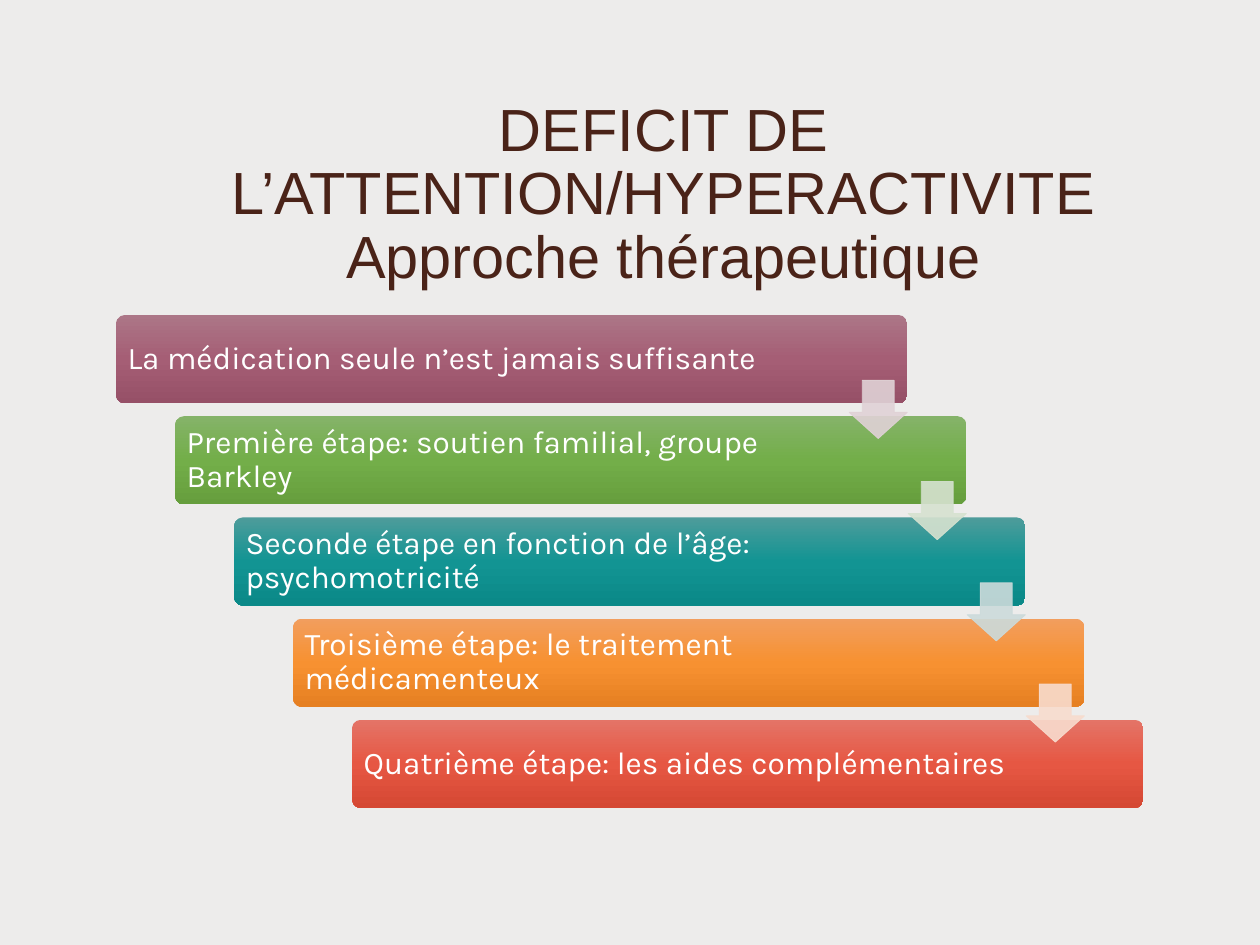
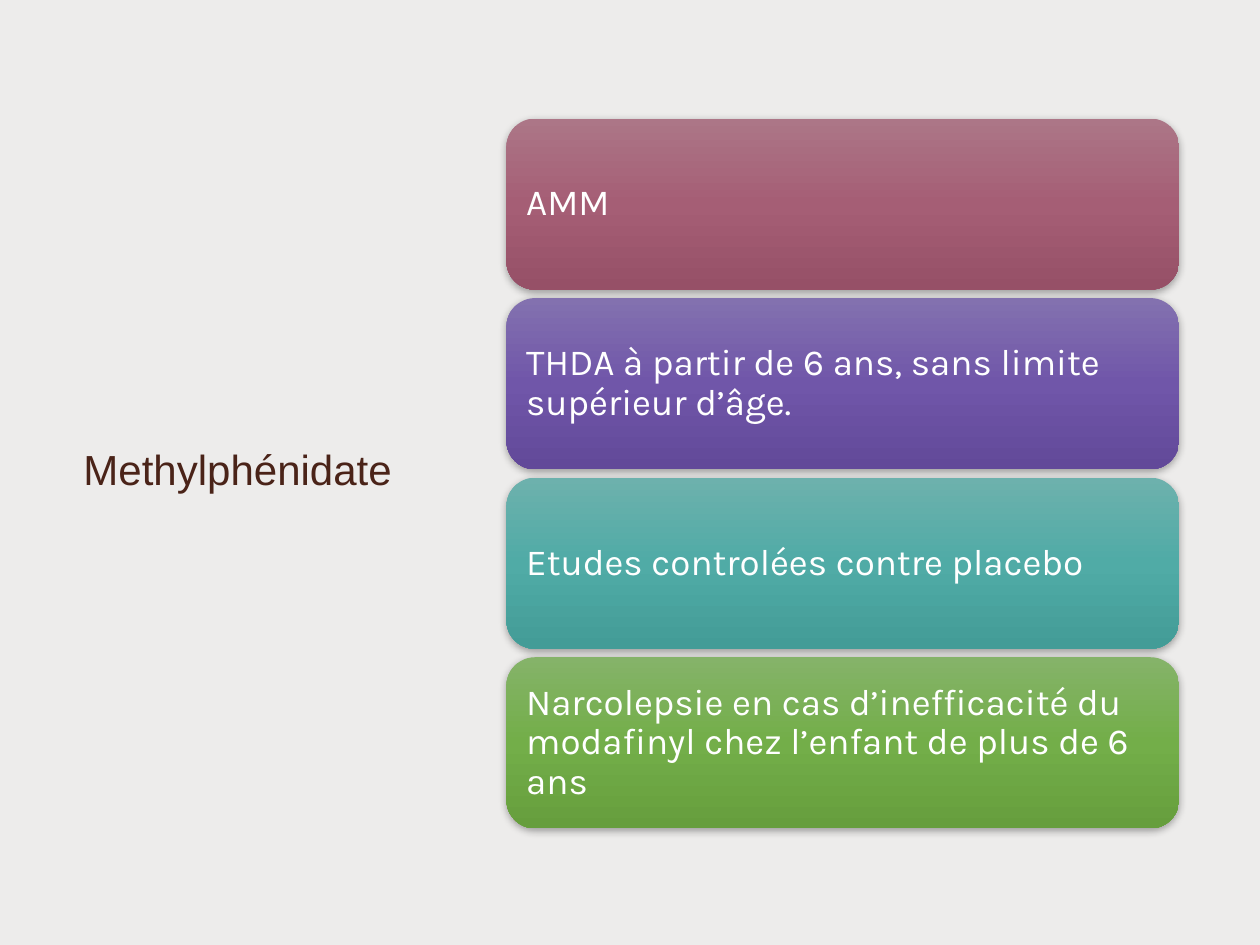
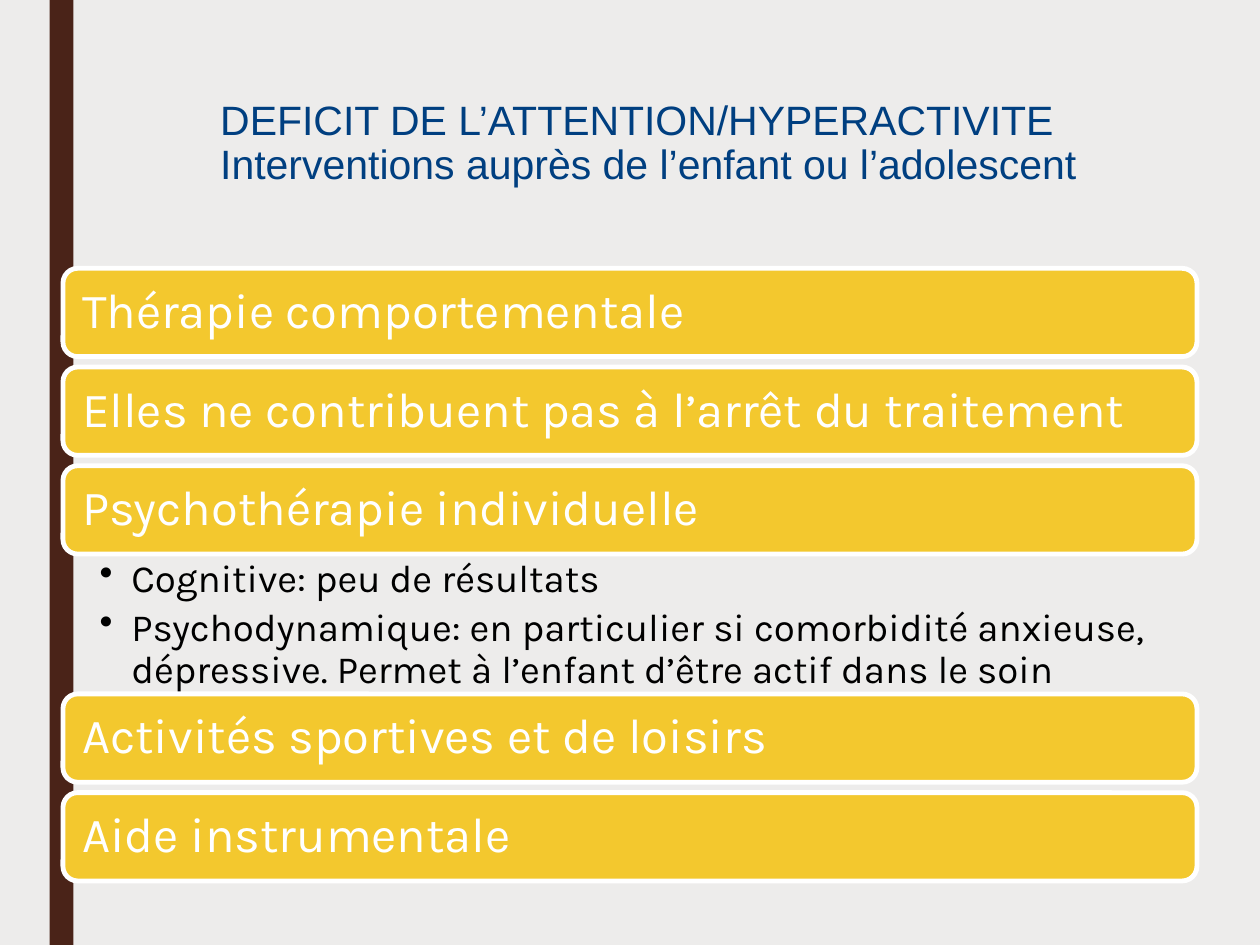
"""Build three slides on the treatment of attention deficit."""
from copy import deepcopy
from dataclasses import dataclass

from lxml.etree import SubElement
from pptx import Presentation
from pptx.dml.color import RGBColor as Rgb
from pptx.enum.shapes import MSO_SHAPE as Form
from pptx.enum.text import MSO_ANCHOR as Anchor, PP_ALIGN as Align
from pptx.oxml.ns import qn
from pptx.shapes.autoshape import Shape
from pptx.slide import Slide
from pptx.text.text import TextFrame
from pptx.util import Cm, Pt

COLORS = {
    "paper": "EDECEB", "brown": "4A2318", "blue": "003F80",
    "white": "FFFFFF", "black": "000000", "gold": "F3C82E",
    "plum": "AC7687 A55E75 965067", "green": "85B369 73AE49 669E3D",
    "teal": "4E9C9B 129493 0B8988", "orange": "F29E5E F79131 E68022",
    "red": "E47467 E65743 D54833", "violet": "8371AF 7056A9 624999",
    "aqua": "6DB1AD 50ABA6 439C97",
    "pale plum": "E0D2D6", "pale green": "D6E2D0",
    "pale teal": "CCDBDB", "pale orange": "F8DCCE",
}
HEAD, BODY = "Arial", "Karla"


@dataclass
class Box:
    """A place in centimetres."""
    left: float
    top: float
    width: float
    height: float

    def spans(self) -> tuple[Cm, Cm, Cm, Cm]:
        """Give the four lengths."""
        return Cm(self.left), Cm(self.top), Cm(self.width), Cm(self.height)


@dataclass
class Look:
    """The style that the bars of one slide share."""
    size: float
    inset: float
    right: float
    round: float = 0.1667
    edge: float = 0
    shade: bool = False


@dataclass
class Step:
    """A bar's text and fill, with the arrow that leads on from it."""
    text: str
    fill: str
    arrow: str = ""


STEPS = [
    Step("La médication seule n’est jamais suffisante", "plum", "pale plum"),
    Step("Première étape: soutien familial, groupe Barkley", "green", "pale green"),
    Step("Seconde étape en fonction de l’âge: psychomotricité", "teal", "pale teal"),
    Step("Troisième étape: le traitement médicamenteux", "orange", "pale orange"),
    Step("Quatrième étape: les aides complémentaires", "red"),
]
FACTS = [
    Step("AMM", "plum"),
    Step("THDA à partir de 6 ans, sans limite supérieur d’âge.", "violet"),
    Step("Etudes controlées contre placebo", "aqua"),
    Step("Narcolepsie en cas d’inefficacité du modafinyl chez l’enfant de plus de 6 ans",
         "green"),
]
CARE = {
    "Thérapie comportementale": [],
    "Elles ne contribuent pas à l’arrêt du traitement": [],
    "Psychothérapie individuelle": [
        "Cognitive: peu de résultats",
        "Psychodynamique: en particulier si comorbidité anxieuse, dépressive. "
        "Permet à l’enfant d’être actif dans le soin",
    ],
    "Activités sportives et de loisirs": [],
    "Aide instrumentale": [],
}


def tint(name: str) -> Rgb:
    """Look up a plain colour."""
    return Rgb.from_string(COLORS[name])


def style(frame: TextFrame, size: float, font: str, color: str, lead: float) -> None:
    """Format all runs of a text frame."""
    frame.word_wrap = True
    for para in frame.paragraphs:
        para.line_spacing = lead
        for run in para.runs:
            run.font.size = Pt(size)
            run.font.name = font
            run.font.color.rgb = tint(color)


def pad(frame: TextFrame, left: float, top: float, right: float) -> None:
    """Set the margins of a text frame."""
    frame.margin_left, frame.margin_right = Cm(left), Cm(right)
    frame.margin_top = frame.margin_bottom = Cm(top)


def add_form(slide: Slide, form: Form, box: Box, fill: str) -> Shape:
    """Draw a shape with a plain or graded fill and no line."""
    shape = slide.shapes.add_shape(form, *box.spans())
    shape.shadow.inherit = False
    shape.line.fill.background()
    tones = COLORS[fill].split()
    if len(tones) == 1:
        shape.fill.solid()
        shape.fill.fore_color.rgb = tint(fill)
        return shape
    shape.fill.gradient()
    shape.fill.gradient_angle = 270
    stops = next(shape._element.spPr.iter(qn("a:gsLst")))
    stops.append(deepcopy(stops[0]))
    for i, (stop, tone) in enumerate(zip(shape.fill.gradient_stops, tones)):
        stop.position = i / 2
        stop.color.rgb = Rgb.from_string(tone)
    return shape


def add_shade(shape: Shape) -> None:
    """Cast a soft shadow below a shape."""
    glow = SubElement(shape._element.spPr.find(qn("a:effectLst")), qn("a:outerShdw"),
                      blurRad=str(Pt(4.5)), dist=str(Pt(1.5)), dir="5400000",
                      rotWithShape="0")
    color = SubElement(glow, qn("a:srgbClr"), val=COLORS["black"])
    SubElement(color, qn("a:alpha"), val="35000")


def add_bar(slide: Slide, box: Box, step: Step, look: Look) -> None:
    """Draw a rounded bar with its text."""
    bar = add_form(slide, Form.ROUNDED_RECTANGLE, box, step.fill)
    bar.adjustments[0] = look.round
    if look.edge:
        bar.line.color.rgb = tint("white")
        bar.line.width = Pt(look.edge)
    if look.shade:
        add_shade(bar)
    frame = bar.text_frame
    frame.text = step.text
    frame.vertical_anchor = Anchor.MIDDLE
    frame.paragraphs[0].alignment = Align.LEFT
    pad(frame, look.inset, look.inset, look.right)
    style(frame, look.size, BODY, "white", 0.9)


def add_arrow(slide: Slide, box: Box, color: str) -> None:
    """Draw a slightly clear arrow that points down."""
    arrow = add_form(slide, Form.DOWN_ARROW, box, color)
    arrow.adjustments[0], arrow.adjustments[1] = 0.55, 0.45
    arrow.line.color.rgb = tint(color)
    arrow.line.width = Pt(0.5)
    for tone in arrow._element.spPr.iter(qn("a:srgbClr")):
        SubElement(tone, qn("a:alpha"), val="90000")


def add_title(slide: Slide, box: Box, text: str, size: float, color: str = "brown",
              align: Align = Align.CENTER, indent: float = 1.35,
              anchor: Anchor = Anchor.TOP) -> None:
    """Write the title of a slide."""
    frame = slide.shapes.add_textbox(*box.spans()).text_frame
    frame.text = text
    frame.vertical_anchor = anchor
    para = frame.paragraphs[0]
    para.alignment = align
    para._p.get_or_add_pPr().set("marL", str(Cm(indent)))
    style(frame, size, HEAD, color, 0.89)


def add_list(slide: Slide, box: Box, lines: list[str]) -> None:
    """Write a list with bullets."""
    frame = slide.shapes.add_textbox(*box.spans()).text_frame
    frame.text = "\n".join(lines)
    pad(frame, 0.74, 0.1, 0.56)
    style(frame, 22, BODY, "black", 0.9)
    for para in frame.paragraphs:
        para.level = 1
        para.space_after = Pt(4.4)
        props = para._p.get_or_add_pPr()
        props.set("marL", str(Cm(0.64)))
        props.set("indent", str(Cm(-0.64)))
        SubElement(props, qn("a:buChar"), char="•")


def draw_steps(slide: Slide) -> None:
    """Draw the stairs of treatment steps."""
    add_title(slide, Box(1.35, 1.9, 22.7, 4.11),
              "DEFICIT DE L’ATTENTION/HYPERACTIVITE Approche thérapeutique", 34)
    look = Look(size=18, inset=0.18, right=2.5, round=0.1)
    spots = [Box(2.34 + 1.19 * i, 6.35 + 2.04 * i, 15.95, 1.78)
             for i in range(len(STEPS))]
    for box, step in zip(spots, STEPS):
        add_bar(slide, box, step, look)
    side = 1.17
    for box, step in zip(spots, STEPS):
        if step.arrow:
            place = Box(box.left + box.width - side, box.top + 1.32, side, side)
            add_arrow(slide, place, step.arrow)


def draw_facts(slide: Slide) -> None:
    """Draw the stack of facts on the drug."""
    add_title(slide, Box(1.35, 1.78, 6.88, 15.49), "Methylphénidate", 24,
              indent=0, anchor=Anchor.MIDDLE)
    look = Look(size=21, inset=0.23, right=0.23, shade=True)
    for i, fact in enumerate(FACTS):
        add_bar(slide, Box(10.21, 2.39 + 3.62 * i, 13.56, 3.45), fact, look)


def draw_care(slide: Slide) -> None:
    """Draw the side band and the list of care for the child."""
    add_form(slide, Form.RECTANGLE, Box(1, 0, 0.48, 19.05), "brown")
    add_title(slide, Box(2.84, 1.9, 20.02, 4.11),
              "DEFICIT DE L’ATTENTION/HYPERACTIVITE "
              "Interventions auprès de l’enfant ou l’adolescent",
              23.4, "blue", Align.LEFT)
    look = Look(size=28, inset=0.3, right=0.3, edge=2.75)
    left, top, width, high, gap, deep = 1.27, 5.41, 22.86, 1.78, 0.21, 2.82
    for text, lines in CARE.items():
        add_bar(slide, Box(left, top, width, high), Step(text, "gold"), look)
        top += high
        if lines:
            add_list(slide, Box(left, top, width, deep), lines)
        top += deep if lines else gap


def main() -> None:
    """Build and save the deck."""
    deck = Presentation()
    deck.slide_width, deck.slide_height = Cm(25.4), Cm(19.05)
    back = deck.slide_master.background.fill
    back.solid()
    back.fore_color.rgb = tint("paper")
    for draw in (draw_steps, draw_facts, draw_care):
        draw(deck.slides.add_slide(deck.slide_layouts[6]))
    deck.save("out.pptx")


if __name__ == "__main__":
    main()
